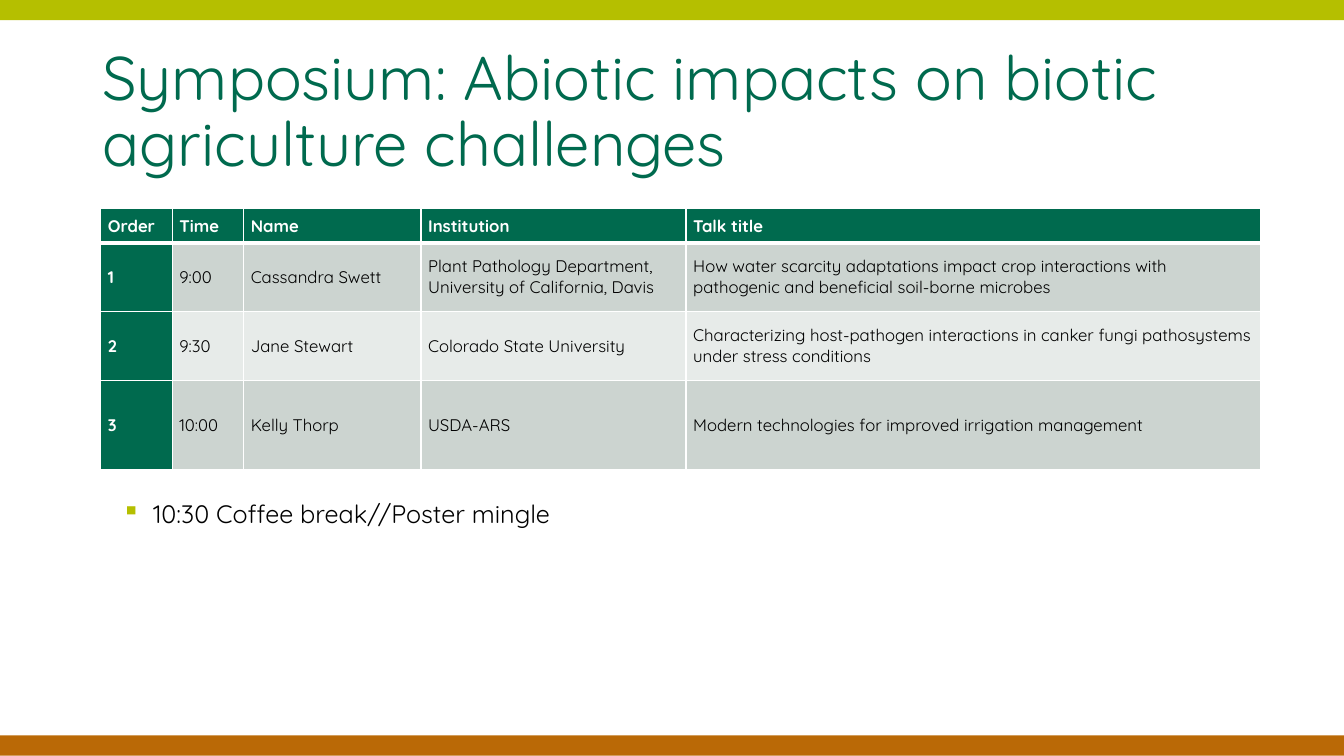
import dataclasses

import lxml.etree
import pptx
import pptx.dml.color
import pptx.enum.shapes
import pptx.enum.text
import pptx.oxml
import pptx.oxml.ns
import pptx.util

Cm = pptx.util.Cm
Pt = pptx.util.Pt
FONT = "Quicksand"
COLORS = {
    "lime": "B5BF00",
    "orange": "BA6906",
    "green": "006A4E",
    "dark band": "CCD4D0",
    "light band": "E7EBE9",
    "white": "FFFFFF",
    "black": "000000",
}
COLUMN_WIDTHS = (1.8, 1.8, 4.47, 6.68, 14.47)
ROW_HEIGHTS = (0.86, 1.73, 1.73, 2.26)
HEADINGS = ("Order", "Time", "Name", "Institution", "Talk title")


@dataclasses.dataclass(frozen=True)
class Bar:
    top: float
    color: str


@dataclasses.dataclass(frozen=True)
class Talk:
    time: str
    name: str
    institution: str
    title: str


BARS = (Bar(0, "lime"), Bar(18.53, "orange"))
TALKS = (
    Talk("9:00", "Cassandra Swett",
         "Plant Pathology Department, University of California, Davis",
         "How water scarcity adaptations impact crop interactions with "
         "pathogenic and beneficial soil-borne microbes"),
    Talk("9:30", "Jane Stewart", "Colorado State University",
         "Characterizing host-pathogen interactions in canker fungi "
         "pathosystems under stress conditions"),
    Talk("10:00", "Kelly Thorp", "USDA-ARS",
         "Modern technologies for improved irrigation management"),
)


def rgb(color: str) -> pptx.dml.color.RGBColor:
    return pptx.dml.color.RGBColor.from_string(COLORS[color])


def style(paragraph, size: float, color: str, bold: bool = False) -> None:
    font = paragraph.font
    font.name = FONT
    font.size = Pt(size)
    font.bold = bold
    font.color.rgb = rgb(color)


def add_element(parent, tag: str, **attributes: str):
    return lxml.etree.SubElement(parent, pptx.oxml.ns.qn(tag), attributes)


def draw_bar(page, bar: Bar, width: int) -> None:
    shape = page.shapes.add_shape(
        pptx.enum.shapes.MSO_SHAPE.RECTANGLE, 0, Cm(bar.top), width, Cm(0.51))
    shape.shadow.inherit = False
    shape.fill.solid()
    shape.fill.fore_color.rgb = rgb(bar.color)
    shape.line.fill.background()


def add_text(page, left: float, top: float, width: float, height: float, text: str):
    box = page.shapes.add_textbox(Cm(left), Cm(top), Cm(width), Cm(height))
    box.text_frame.word_wrap = True
    paragraph = box.text_frame.paragraphs[0]
    paragraph.text = text
    return box.text_frame, paragraph


def draw_title(page) -> None:
    frame, paragraph = add_text(
        page, 2.33, 1.02, 29.21, 3.68,
        "Symposium: Abiotic impacts on biotic agriculture challenges")
    frame.vertical_anchor = pptx.enum.text.MSO_ANCHOR.MIDDLE
    paragraph.line_spacing = 0.9
    style(paragraph, 44, "green")


def draw_break(page) -> None:
    _, paragraph = add_text(
        page, 2.82, 12.43, 16.94, 1.04, "10:30 Coffee break//Poster mingle")
    properties = paragraph._p.get_or_add_pPr()
    properties.set("marL", str(Cm(0.79)))
    properties.set("indent", str(Cm(-0.79)))
    bullet_color = add_element(properties, "a:buClr")
    add_element(bullet_color, "a:srgbClr", val=COLORS["lime"])
    add_element(properties, "a:buChar", char="▪")
    style(paragraph, 18, "black")


def add_borders(cell, top: float, bottom: float) -> None:
    properties = cell._tc.get_or_add_tcPr()
    for side, width in (("L", 1), ("R", 1), ("T", top), ("B", bottom)):
        line = add_element(properties, f"a:ln{side}", w=str(Pt(width)))
        fill = add_element(line, "a:solidFill")
        add_element(fill, "a:srgbClr", val=COLORS["white"])


def fill_cell(cell, text: str, row: int, column: int) -> None:
    strong = row == 0 or column == 0
    band = "dark band" if row % 2 else "light band"
    add_borders(cell, 3 if row == 1 else 1, 3 if row == 0 else 1)
    cell.fill.solid()
    cell.fill.fore_color.rgb = rgb("green" if strong else band)
    cell.margin_left = cell.margin_right = Cm(0.18)
    cell.margin_top = cell.margin_bottom = 0
    cell.vertical_anchor = pptx.enum.text.MSO_ANCHOR.MIDDLE
    paragraph = cell.text_frame.paragraphs[0]
    paragraph.text = text
    style(paragraph, 12, "white" if strong else "black", strong)


def draw_schedule(page) -> None:
    rows = [HEADINGS] + [
        (str(order), *dataclasses.astuple(talk))
        for order, talk in enumerate(TALKS, 1)]
    table = page.shapes.add_table(
        len(rows), len(HEADINGS), Cm(2.54), Cm(5.26),
        Cm(sum(COLUMN_WIDTHS)), Cm(sum(ROW_HEIGHTS))).table
    for column, width in zip(table.columns, COLUMN_WIDTHS):
        column.width = Cm(width)
    for row, height in zip(table.rows, ROW_HEIGHTS):
        row.height = Cm(height)
    for row_index, texts in enumerate(rows):
        for column_index, text in enumerate(texts):
            fill_cell(table.cell(row_index, column_index), text,
                      row_index, column_index)


def main() -> None:
    deck = pptx.Presentation()
    deck.slide_width = Cm(33.87)
    deck.slide_height = Cm(19.05)
    page = deck.slides.add_slide(deck.slide_layouts[6])
    for bar in BARS:
        draw_bar(page, bar, deck.slide_width)
    draw_title(page)
    draw_schedule(page)
    draw_break(page)
    deck.save("out.pptx")


if __name__ == "__main__":
    main()
